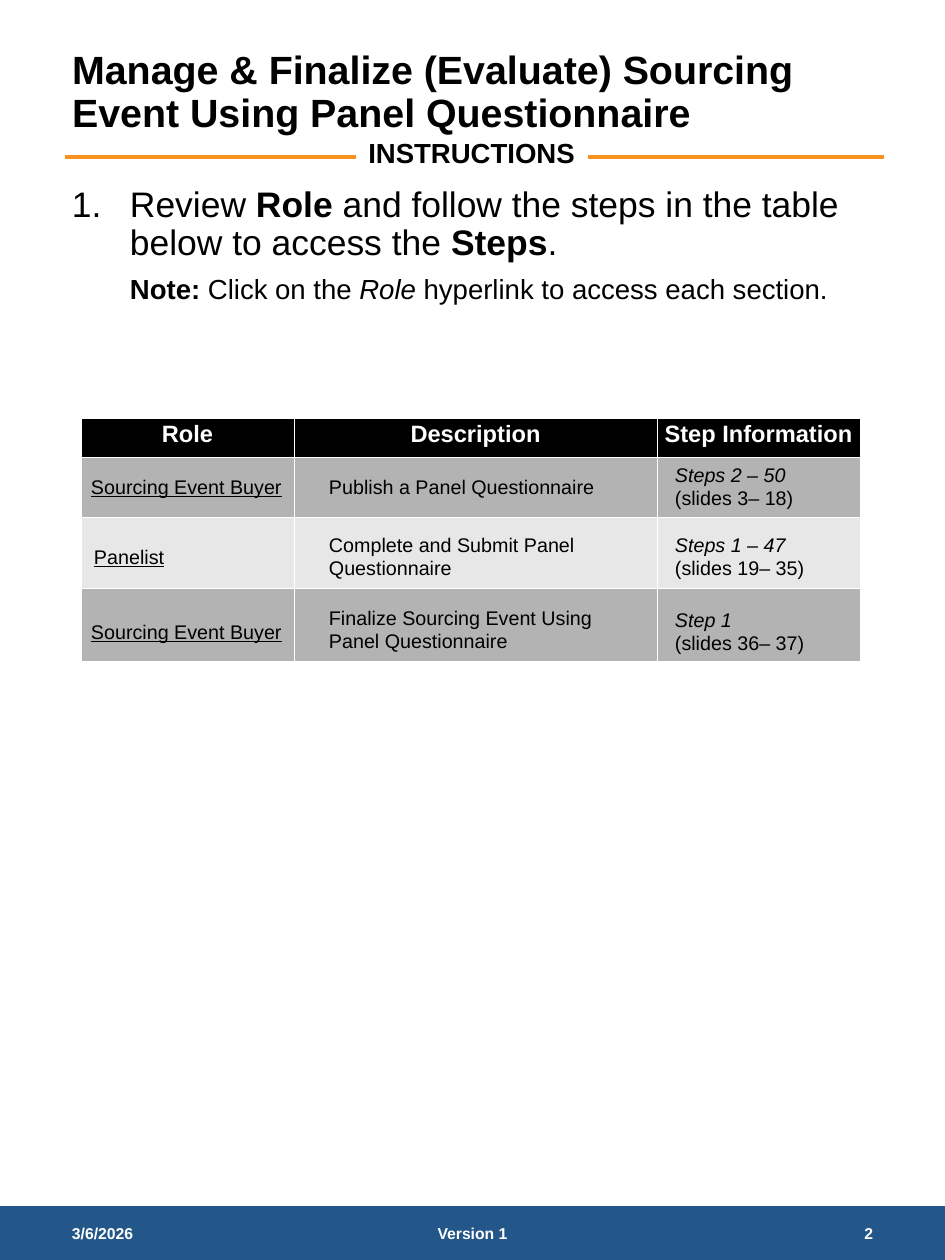
from lxml.etree import SubElement
from pptx import Presentation
from pptx.dml.color import RGBColor
from pptx.enum.shapes import MSO_CONNECTOR, MSO_SHAPE
from pptx.enum.text import MSO_ANCHOR as ANCHOR, MSO_AUTO_SIZE as AUTO, PP_ALIGN as ALIGN
from pptx.oxml.ns import qn
from pptx.util import Emu, Pt

BLACK = RGBColor(0x00, 0x00, 0x00)
WHITE = RGBColor(0xFF, 0xFF, 0xFF)
BLUE = RGBColor(0x23, 0x57, 0x89)
ORANGE = RGBColor(0xF7, 0x92, 0x1E)
DARK_GREY = RGBColor(0xB3, 0xB3, 0xB3)
LIGHT_GREY = RGBColor(0xE7, 0xE7, 0xE7)

FONT = "Arial"
SCALE = 12900
WIDTH, HEIGHT = 945, 1260
MARGIN = 65

HEADERS = ["Role", "Description", "Step Information"]
COLUMNS = [213, 363, 203]
ROWS = [39, 60, 71, 73]
ROW_FILLS = [BLACK, DARK_GREY, LIGHT_GREY, DARK_GREY]
ROLES = [
    ("Sourcing Event Buyer", (3, 53), "Publish a Panel Questionnaire", 53,
     "Steps 2 – 50", "(slides 3– 18)", 41),
    ("Panelist", (6, 123), "Complete and Submit Panel Questionnaire", 111,
     "Steps 1 – 47", "(slides 19– 35)", 111),
    ("Sourcing Event Buyer", (3, 198), "Finalize Sourcing Event Using Panel Questionnaire", 184,
     "Step 1", "(slides 36– 37)", 186),
]


def px(n):
    return Emu(n * SCALE)


def style(p, size, color=BLACK, bold=None, align=ALIGN.LEFT):
    p.alignment = align
    f = p.font
    f.name, f.size, f.bold = FONT, Pt(size), bold
    f.color.rgb = color


def add_text(slide, box, lines, size, color=BLACK, bold=None, align=ALIGN.LEFT, anchor=ANCHOR.TOP):
    tf = slide.shapes.add_textbox(*map(px, box)).text_frame
    tf.word_wrap = True
    tf.vertical_anchor = anchor
    for i, line in enumerate(lines):
        p = tf.add_paragraph() if i else tf.paragraphs[0]
        p.text = line
        style(p, size, color, bold, align)
    return tf


def add_rect(slide, box, color):
    s = slide.shapes.add_shape(MSO_SHAPE.RECTANGLE, *map(px, box))
    s.shadow.inherit = False
    s.fill.solid()
    s.fill.fore_color.rgb = color
    s.line.color.rgb = color
    s.line.width = Pt(1)


def add_runs(p, parts):
    for text, mark in parts:
        r = p.add_run()
        r.text = text
        if mark == "b":
            r.font.bold = True
        elif mark == "i":
            r.font.italic = True


def add_title(slide, x, y, w, h):
    s = slide.shapes.title
    s.left, s.top, s.width, s.height = map(px, (x, y, w, h))
    tf = s.text_frame
    tf.text = "Manage & Finalize (Evaluate) Sourcing Event Using Panel Questionnaire"
    tf.word_wrap = True
    tf.auto_size = AUTO.NONE
    tf.vertical_anchor = ANCHOR.MIDDLE
    p = tf.paragraphs[0]
    p.line_spacing = 0.9
    style(p, 40, bold=True)


def add_heading(slide, x, y, w, h):
    middle = y + h // 2
    rule = slide.shapes.add_connector(
        MSO_CONNECTOR.STRAIGHT, px(x), px(middle), px(x + w), px(middle))
    rule.line.color.rgb = ORANGE
    rule.line.width = Pt(4.5)
    SubElement(rule._element.spPr, qn("a:effectLst"))
    add_rect(slide, (x + 292, y, 231, h), WHITE)
    add_text(slide, (x + 296, y - 8, 221, 40), ["INSTRUCTIONS"], 28, bold=True, align=ALIGN.CENTER)


def add_instructions(slide, x, y, w, h):
    tf = add_text(slide, (x, y, w, h), ["", ""], 36)
    step, note = tf.paragraphs
    indent = px(58)
    for p, first in ((step, -indent), (note, 0)):
        pPr = p._p.get_or_add_pPr()
        pPr.set("marL", str(indent))
        pPr.set("indent", str(first))
        p.line_spacing = 0.9
    bullet = pPr.makeelement(qn("a:buAutoNum"), {"type": "arabicPeriod"})
    step._p.pPr.insert_element_before(bullet, "a:tabLst", "a:defRPr", "a:extLst")
    add_runs(step, [("Review ", ""), ("Role", "b"),
                    (" and follow the steps in the table below to access the ", ""),
                    ("Steps", "b"), (".", "")])
    add_runs(note, [("Note: ", "b"), ("Click on the ", ""), ("Role", "i"),
                    (" hyperlink to access each section.", "")])
    note.space_before = Pt(13.3)
    note.font.size = Pt(28)


def format_cell(cell, color):
    tcPr = cell._tc.get_or_add_tcPr()
    for side in ("lnL", "lnR", "lnT", "lnB"):
        ln = SubElement(tcPr, qn(f"a:{side}"), w=str(Pt(1)))
        fill = SubElement(ln, qn("a:solidFill"))
        SubElement(fill, qn("a:srgbClr"), val=str(WHITE))
    cell.fill.solid()
    cell.fill.fore_color.rgb = color
    cell.margin_left = cell.margin_right = px(6)


def add_roles(slide, x, y):
    table = slide.shapes.add_table(
        len(ROWS), len(COLUMNS), px(x), px(y), px(sum(COLUMNS)), px(sum(ROWS))).table
    for column, w in zip(table.columns, COLUMNS):
        column.width = px(w)
    for row, h, color in zip(table.rows, ROWS, ROW_FILLS):
        row.height = px(h)
        for cell in row.cells:
            format_cell(cell, color)
    for cell, header in zip(table.rows[0].cells, HEADERS):
        cell.text = header
        style(cell.text_frame.paragraphs[0], 24, WHITE, True, ALIGN.CENTER)

    for role, (dx, dy), description, description_y, steps, slides, steps_y in ROLES:
        tf = add_text(slide, (x + dx, y + dy, 213, 31), [role], 20)
        tf.paragraphs[0].font.underline = True
        add_text(slide, (x + 241, y + description_y, 306, 55), [description], 20)
        tf = add_text(slide, (x + 587, y + steps_y, 178, 55), [steps, slides], 20)
        tf.paragraphs[0].font.italic = True


def add_footer(slide, x, y, w, h):
    add_rect(slide, (x, y, w, h), BLUE)
    right = x + w - MARGIN
    for text, left, width, align in (
            ("3/6/2026", x + MARGIN, 213, ALIGN.LEFT),
            ("Version 1", x + (w - 319) // 2, 319, ALIGN.CENTER),
            ("2", right - 213, 213, ALIGN.RIGHT)):
        add_text(slide, (left, y, width, h), [text], 16, WHITE, True, align, ANCHOR.MIDDLE)


def main():
    prs = Presentation()
    prs.slide_width, prs.slide_height = px(WIDTH), px(HEIGHT)
    slide = prs.slides.add_slide(prs.slide_layouts[5])
    add_footer(slide, 0, 1206, WIDTH, 54)
    add_heading(slide, MARGIN, 140, 819, 35)
    add_title(slide, MARGIN, 62, 815, 62)
    add_instructions(slide, MARGIN, 183, 819, 469)
    add_roles(slide, 81, 418)
    prs.save("out.pptx")


if __name__ == "__main__":
    main()
